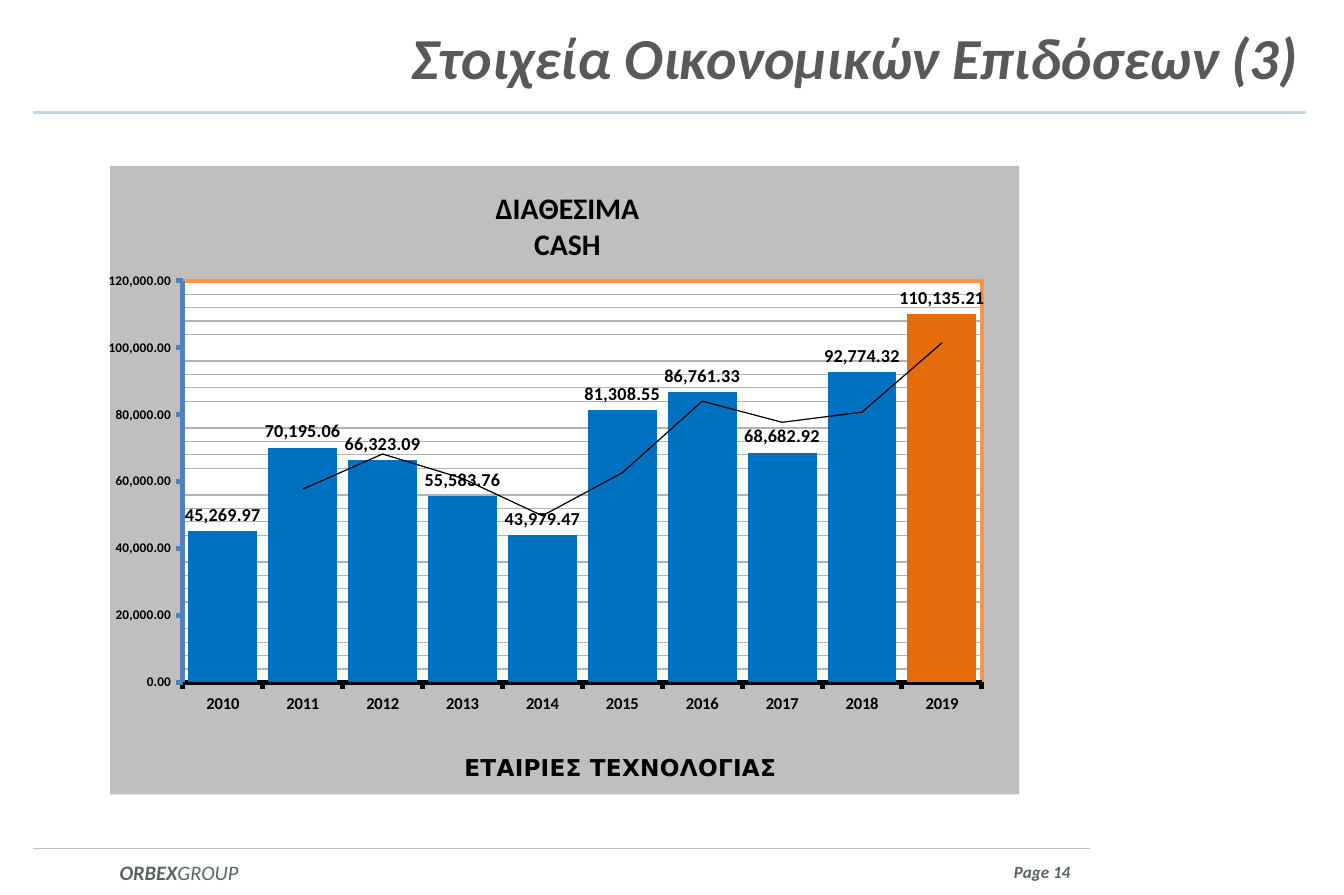
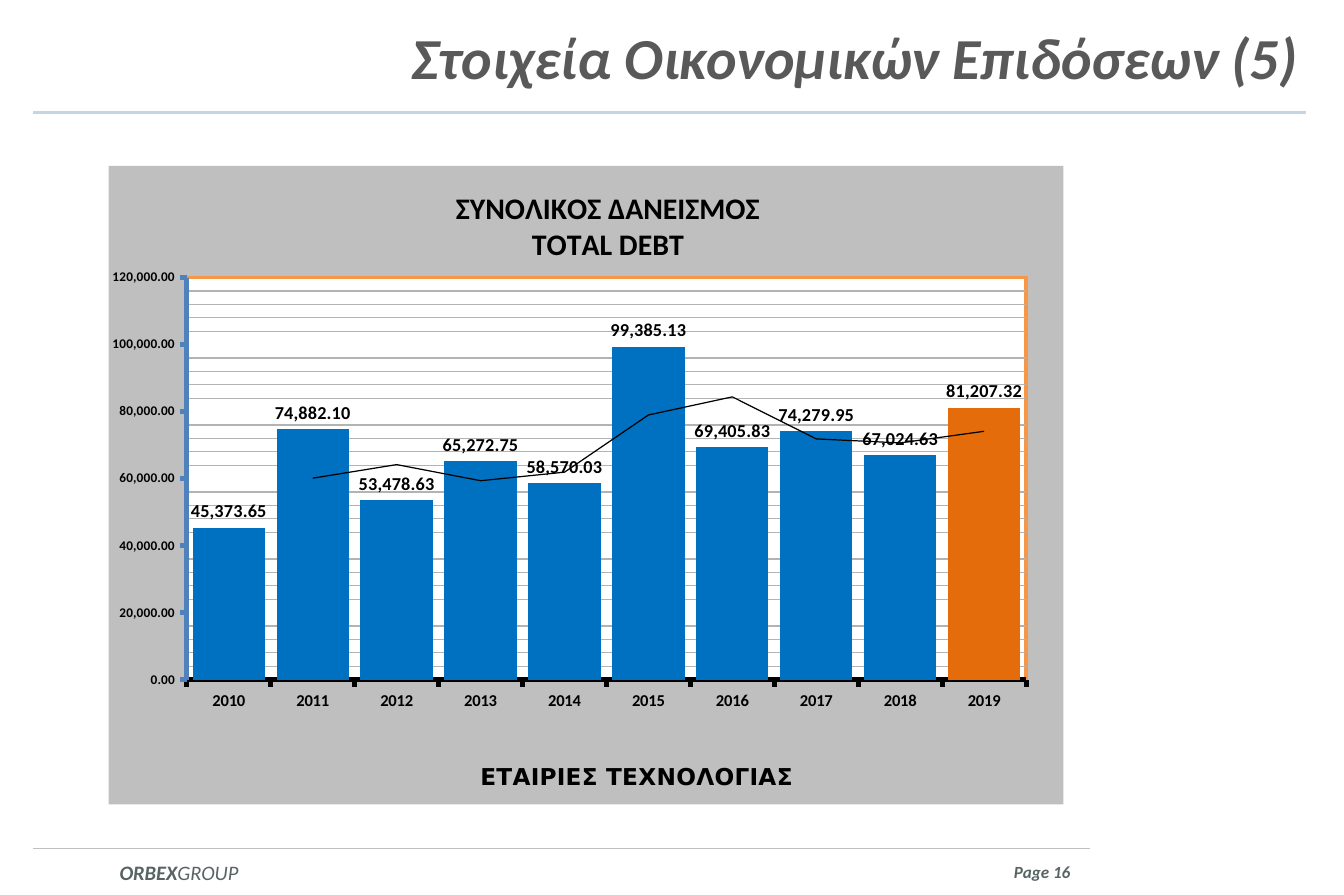
import pptx
import pptx.chart.data
import pptx.dml.color
import pptx.enum.chart
import pptx.enum.shapes
import pptx.enum.text
import pptx.oxml
import pptx.oxml.ns
import pptx.util
from lxml import etree

Cm = pptx.util.Cm
Pt = pptx.util.Pt
RGB = pptx.dml.color.RGBColor
ALIGN = pptx.enum.text.PP_ALIGN
TICK = pptx.enum.chart.XL_TICK_MARK
qn = pptx.oxml.ns.qn

BLACK = RGB(0x00, 0x00, 0x00)
TITLE = RGB(0x59, 0x59, 0x59)
FOOT = RGB(0x58, 0x64, 0x64)
RULE = RGB(0xC6, 0xD5, 0xE4)
BASE = RGB(0xC0, 0xC0, 0xC2)
BLUE = RGB(0x00, 0x70, 0xC0)
ORANGE = RGB(0xE4, 0x6C, 0x0A)
AXIS = RGB(0x4F, 0x81, 0xBD)
PANEL = RGB(0xBF, 0xBF, 0xBF)
GRID = RGB(0xB3, 0xB3, 0xB3)
FRAME = RGB(0xF7, 0x96, 0x46)
WHITE = RGB(0xFF, 0xFF, 0xFF)

FONT = "Calibri"
MONEY = "#,##0.00"
YEARS = [str(year) for year in range(2010, 2020)]

SLIDES = [
    dict(title="Στοιχεία Οικονομικών Επιδόσεων (3)", page=14,
         head=["ΔΙΑΘΕΣΙΜΑ", "CASH"], spot=(0.42, 0.03),
         box=(2.31, 3.53, 19.38, 13.38), plot=(0.08, 0.183, 0.879, 0.639),
         vals=[45269.97, 70195.06, 66323.09, 55583.76, 43979.47,
               81308.55, 86761.33, 68682.92, 92774.32, 110135.21]),
    dict(title="Στοιχεία Οικονομικών Επιδόσεων (5)", page=16,
         head=["ΣΥΝΟΛΙΚΟΣ ΔΑΝΕΙΣΜΟΣ", "TOTAL DEBT"], spot=(0.36, 0.03),
         box=(2.31, 3.53, 20.32, 13.59), plot=(0.082, 0.175, 0.879, 0.63),
         vals=[45373.65, 74882.10, 53478.63, 65272.75, 58570.03,
               99385.13, 69405.83, 74279.95, 67024.63, 81207.32]),
]


def style(font, size, color=BLACK, bold=True, italic=False, name=FONT):
    font.name, font.size = name, Pt(size)
    font.bold, font.italic = bold, italic
    font.color.rgb = color


def add_rule(slide, left, right, y, color, width):
    line = slide.shapes.add_connector(
        pptx.enum.shapes.MSO_CONNECTOR.STRAIGHT,
        Cm(left), Cm(y), Cm(right), Cm(y))
    line.line.color.rgb = color
    line.line.width = Pt(width)
    etree.SubElement(line._element.spPr, qn("a:effectLst"))


def add_text(slide, box, parts, size, color, align, pad=(0, 0)):
    """Add one line of italic text; parts are (text, bold) pairs."""
    frame = slide.shapes.add_textbox(*map(Cm, box)).text_frame
    frame.word_wrap = True
    frame.vertical_anchor = pptx.enum.text.MSO_ANCHOR.MIDDLE
    frame.margin_left = frame.margin_right = Cm(pad[0])
    frame.margin_top = frame.margin_bottom = Cm(pad[1])
    para = frame.paragraphs[0]
    para.alignment = align
    for text, bold in parts:
        run = para.add_run()
        run.text = text
        style(run.font, size, color, bold, True)


def add_bands(slide, title, page):
    """Add the title with its rule, and the footer."""
    add_rule(slide, 0.71, 27.79, 2.39, RULE, 1.75)
    add_rule(slide, 0.71, 23.19, 18.06, BASE, 1)
    add_text(slide, (0.71, 18.21, 6.2, 0.71),
             [("ORBEX", True), ("GROUP", False)], 12.4, FOOT, ALIGN.CENTER)
    add_text(slide, (20.4, 18.21, 2.38, 0.71),
             [(f"Page {page}", True)], 10.3, FOOT, ALIGN.RIGHT)
    add_text(slide, (0.71, 0, 27.1, 2.39),
             [(title, True)], 35, TITLE, ALIGN.RIGHT, (0.18, 0.1))


def make(tag, inner):
    """Return a chart element with the given content."""
    return pptx.oxml.parse_xml(
        f'<c:{tag} {pptx.oxml.ns.nsdecls("c", "a")}>{inner}</c:{tag}>')


def solid(color):
    return f'<a:solidFill><a:srgbClr val="{color}"/></a:solidFill>'


def stroke(color, width):
    return f'<a:ln w="{Pt(width)}">{solid(color)}</a:ln>'


def place(owner, spot):
    """Set a manual layout of fractions x, y and maybe w, h."""
    old = owner.find(qn("c:layout"))
    if old is not None:
        owner.remove(old)
    keys = "xywh"[:len(spot)]
    inner = '<c:layoutTarget val="inner"/>' if len(spot) == 4 else ""
    inner += "".join(f'<c:{k}Mode val="edge"/>' for k in "xy")
    inner += "".join(f'<c:{k} val="{v}"/>' for k, v in zip(keys, spot))
    layout = make("layout", f"<c:manualLayout>{inner}</c:manualLayout>")
    text = owner.find(qn("c:tx"))
    if text is None:
        owner.insert(0, layout)
    else:
        text.addnext(layout)


def set_title(title, lines, spot, size, name=FONT):
    frame = title.text_frame
    frame.text = "\n".join(lines)
    for para in frame.paragraphs:
        para.alignment = ALIGN.CENTER
        for run in para.runs:
            style(run.font, size, name=name)
    place(title._element, spot)


def set_axis(axis, color, size):
    axis.has_major_gridlines = False
    axis.major_tick_mark = TICK.OUTSIDE
    axis.minor_tick_mark = TICK.NONE
    axis.format.line.color.rgb = color
    axis.format.line.width = Pt(3)
    style(axis.tick_labels.font, size)


def set_bars(plot):
    """Colour and label the columns, and add a moving average."""
    plot.gap_width = 16
    plot.vary_by_categories = False
    bars = plot.series[0]
    bars.invert_if_negative = False
    bars.format.fill.solid()
    bars.format.fill.fore_color.rgb = BLUE
    last = bars.points[len(YEARS) - 1].format.fill
    last.solid()
    last.fore_color.rgb = ORANGE
    labels = bars.data_labels
    labels.show_value = True
    labels.position = pptx.enum.chart.XL_LABEL_POSITION.OUTSIDE_END
    labels.number_format = MONEY
    labels.number_format_is_linked = False
    style(labels.font, 11)
    trend = make("trendline",
                 f'<c:spPr>{stroke(BLACK, 0.75)}</c:spPr>'
                 '<c:trendlineType val="movingAvg"/><c:period val="2"/>'
                 '<c:dispRSqr val="0"/><c:dispEq val="0"/>')
    bars._element.find(qn("c:cat")).addprevious(trend)


def add_columns(slide, box, head, spot, plot, vals):
    data = pptx.chart.data.CategoryChartData(number_format=MONEY)
    data.categories = YEARS
    data.add_series("Series 1", vals)
    chart = slide.shapes.add_chart(
        pptx.enum.chart.XL_CHART_TYPE.COLUMN_CLUSTERED,
        *map(Cm, box), data).chart
    style(chart.font, 10, bold=False)
    chart.has_legend = False
    chart.has_title = True
    set_title(chart.chart_title, head, spot, 18)
    set_bars(chart.plots[0])

    years = chart.category_axis
    set_axis(years, BLACK, 10)
    years.has_title = True
    set_title(years.axis_title, ["ΕΤΑΙΡΙΕΣ ΤΕΧΝΟΛΟΓΙΑΣ"], (0.385, 0.925),
              14, "DejaVu Sans")

    money = chart.value_axis
    set_axis(money, AXIS, 8)
    money.minimum_scale, money.maximum_scale = 0, 120000
    money.major_unit, money.minor_unit = 20000, 4000
    money.tick_labels.number_format = MONEY
    money.tick_labels.number_format_is_linked = False
    money.has_minor_gridlines = True
    grid = money._element.find(qn("c:minorGridlines"))
    grid.append(make("spPr", stroke(GRID, 0.75)))

    root = chart._chartSpace.find(qn("c:chart"))
    area = root.find(qn("c:plotArea"))
    place(area, plot)
    area.append(make("spPr", solid(WHITE) + stroke(FRAME, 2)))
    root.addnext(make("spPr", solid(PANEL) + "<a:ln><a:noFill/></a:ln>"))


def main():
    deck = pptx.Presentation()
    deck.slide_width, deck.slide_height = Cm(28.6), Cm(19.05)
    for item in SLIDES:
        slide = deck.slides.add_slide(deck.slide_layouts[6])
        add_bands(slide, item["title"], item["page"])
        add_columns(slide, item["box"], item["head"], item["spot"],
                    item["plot"], item["vals"])
    deck.save("out.pptx")


if __name__ == "__main__":
    main()
